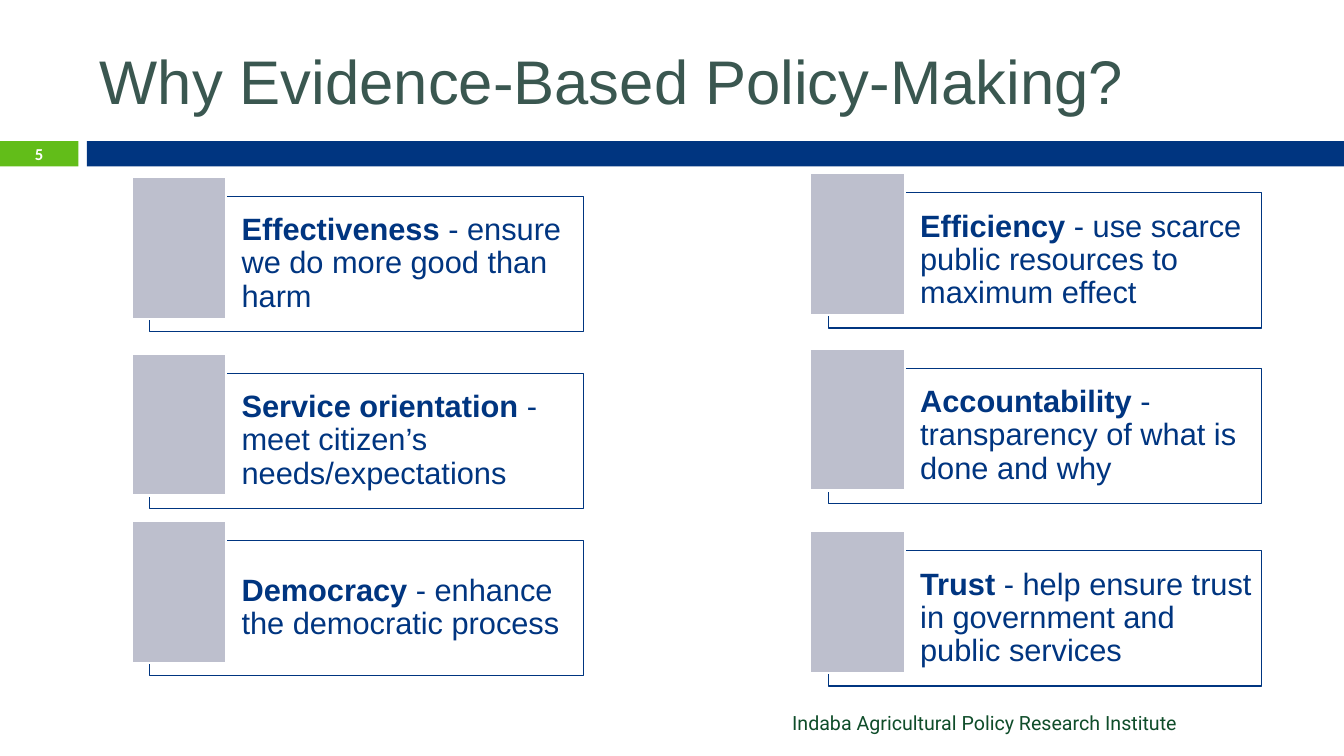
"""Build the evidence-based policy-making slide."""
from typing import NamedTuple

from lxml.etree import SubElement
from pptx import Presentation
from pptx.dml.color import RGBColor
from pptx.enum.shapes import MSO_SHAPE
from pptx.enum.text import MSO_ANCHOR, MSO_AUTO_SIZE, PP_ALIGN
from pptx.oxml.ns import qn
from pptx.shapes.autoshape import Shape
from pptx.slide import Slide
from pptx.text.text import TextFrame
from pptx.util import Pt

COLOURS = {
    "navy": "003580",
    "green": "62BD19",
    "title": "3A5750",
    "footer": "0F4D2A",
    "block": "BDBFCD",
    "white": "FFFFFF",
}
LEFT_COLUMN, RIGHT_COLUMN = 107.1, 591.8
CARD_WIDTH, CARD_HEIGHT = 309.6, 96.7
BLOCK_WIDTH, BLOCK_HEIGHT = 67.5, 101.3
BLOCK_SHIFT_X, BLOCK_SHIFT_Y = -12.9, -13.9


class Box(NamedTuple):
    """Position and size in points."""

    left: float
    top: float
    width: float
    height: float

    def lengths(self) -> list[Pt]:
        """Return the four values as lengths."""
        return [Pt(value) for value in self]


class Reason(NamedTuple):
    """One reason card: its place, bold term and explanation."""

    left: float
    top: float
    term: str
    explanation: str


REASONS = [
    Reason(LEFT_COLUMN, 140.2, "Effectiveness", " - ensure we do more good than harm"),
    Reason(RIGHT_COLUMN, 137.6, "Efficiency", " - use scarce public resources to maximum effect"),
    Reason(LEFT_COLUMN, 266.6, "Service orientation", " - meet citizen’s needs/expectations"),
    Reason(RIGHT_COLUMN, 263, "Accountability", " - transparency of what is done and why"),
    Reason(LEFT_COLUMN, 386.1, "Democracy", " - enhance the democratic process"),
    Reason(RIGHT_COLUMN, 393.3, "Trust", " - help ensure trust in government and public services"),
]


def colour(name: str) -> RGBColor:
    """Look up a named colour."""
    return RGBColor.from_string(COLOURS[name])


def write(frame: TextFrame, text: str, *, size: float, color: str, font: str = "Arial",
          bold: bool = False, align: PP_ALIGN = PP_ALIGN.LEFT,
          anchor: MSO_ANCHOR = MSO_ANCHOR.MIDDLE) -> None:
    """Append a formatted run to the first paragraph of a frame."""
    frame.word_wrap = True
    frame.auto_size = MSO_AUTO_SIZE.NONE
    frame.vertical_anchor = anchor
    paragraph = frame.paragraphs[0]
    paragraph.alignment = align
    run = paragraph.add_run()
    run.text = text
    run.font.name = font
    run.font.size = Pt(size)
    run.font.bold = bold
    run.font.color.rgb = colour(color)


def add_rectangle(slide: Slide, box: Box, fill: str, line: str | None = None,
                  line_width: float = 0) -> Shape:
    """Add a flat rectangle, outlined when a line colour is given."""
    shape = slide.shapes.add_shape(MSO_SHAPE.RECTANGLE, *box.lengths())
    shape.shadow.inherit = False
    shape.fill.solid()
    shape.fill.fore_color.rgb = colour(fill)
    if line:
        shape.line.color.rgb = colour(line)
        shape.line.width = Pt(line_width)
    else:
        shape.line.fill.background()
    return shape


def add_reason(slide: Slide, reason: Reason) -> None:
    """Add a reason card with the block over its left edge."""
    card = add_rectangle(slide, Box(reason.left, reason.top, CARD_WIDTH, CARD_HEIGHT),
                         "white", "navy", 0.79)
    fill_colour = card.fill._xPr.find(qn("a:solidFill"))[0]
    SubElement(fill_colour, qn("a:alpha"), val="40000")
    frame = card.text_frame
    frame.margin_left, frame.margin_right = Pt(65.5), Pt(6)
    frame.margin_top = frame.margin_bottom = Pt(6.5)
    frame.paragraphs[0].line_spacing = 0.9
    write(frame, reason.term, size=22, color="navy", bold=True)
    write(frame, reason.explanation, size=22, color="navy")
    block = Box(reason.left + BLOCK_SHIFT_X, reason.top + BLOCK_SHIFT_Y,
                BLOCK_WIDTH, BLOCK_HEIGHT)
    add_rectangle(slide, block, "block", "white", 1.5)


def main() -> None:
    """Create and save the presentation."""
    presentation = Presentation()
    presentation.slide_width, presentation.slide_height = Pt(960), Pt(540)
    slide = presentation.slides.add_slide(presentation.slide_layouts[5])

    title = slide.shapes.title
    title.left, title.top, title.width, title.height = Box(64, 18, 856, 78).lengths()
    write(title.text_frame, "Why Evidence-Based Policy-Making?", size=44, color="title")

    number = add_rectangle(slide, Box(0, 100.8, 56, 18), "green")
    number.text_frame.margin_top = number.text_frame.margin_bottom = 0
    write(number.text_frame, "5", size=11.9, color="white", font="Calibri", bold=True,
          align=PP_ALIGN.CENTER)
    add_rectangle(slide, Box(62, 100.8, 898, 18), "navy")

    for reason in REASONS:
        add_reason(slide, reason)

    footer = slide.shapes.add_textbox(*Box(440, 504, 408, 24.5).lengths())
    write(footer.text_frame, "Indaba Agricultural Policy Research Institute", size=14,
          color="footer", font="Roboto", align=PP_ALIGN.RIGHT, anchor=MSO_ANCHOR.TOP)
    presentation.save("out.pptx")


if __name__ == "__main__":
    main()
